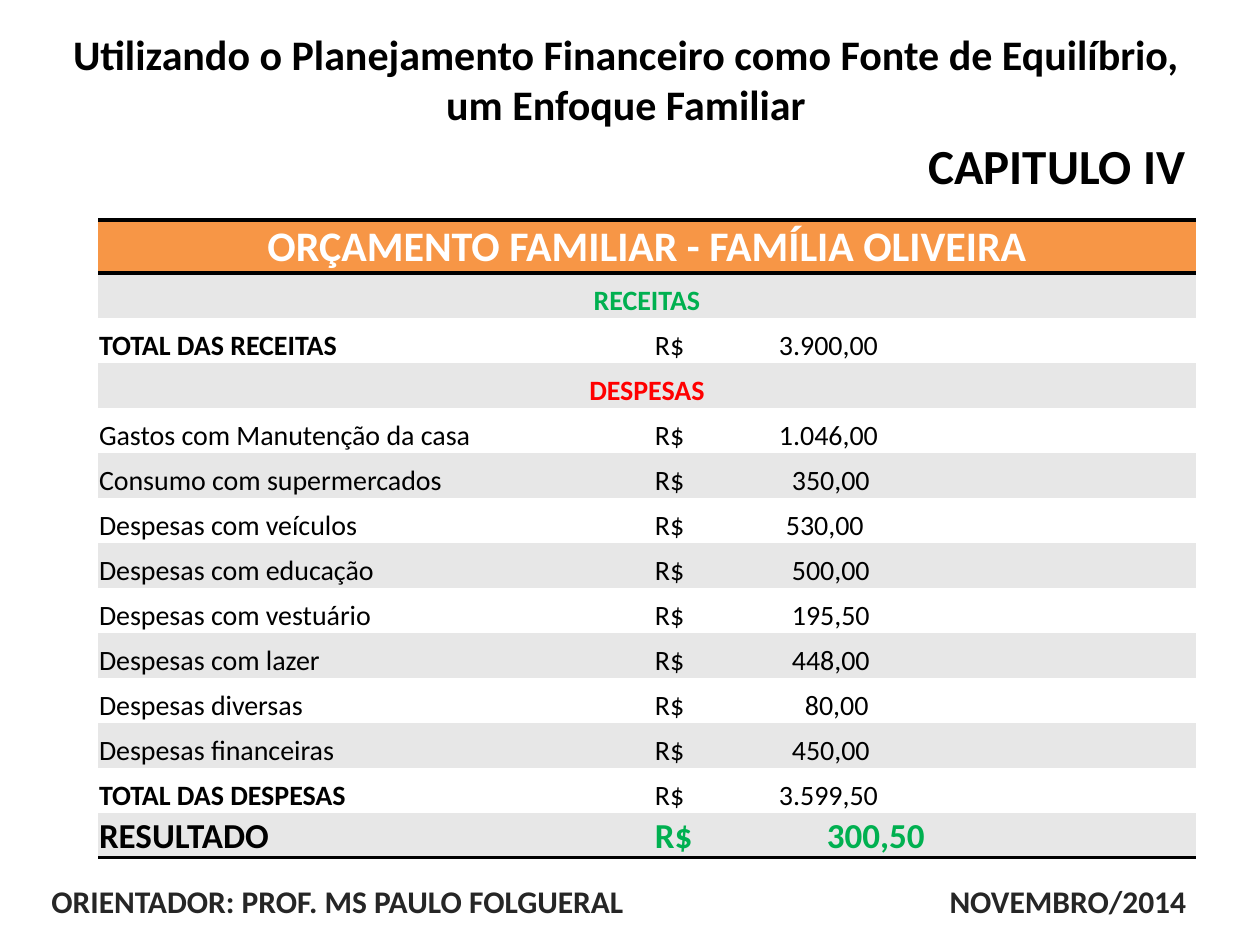
from lxml.etree import SubElement
from pptx import Presentation
from pptx.dml.color import RGBColor
from pptx.enum.text import MSO_ANCHOR, MSO_AUTO_SIZE, PP_ALIGN
from pptx.oxml.ns import qn
from pptx.util import Emu, Pt

PX = 914400 // 126
FONT = "Calibri"
NO_GRID_STYLE = "{2D5ABB26-0587-4C30-8999-92F81FD0307C}"

BLACK = RGBColor(0x00, 0x00, 0x00)
WHITE = RGBColor(0xFF, 0xFF, 0xFF)
GRAY = RGBColor(0xE7, 0xE7, 0xE7)
CHARCOAL = RGBColor(0x26, 0x26, 0x26)
ORANGE = RGBColor(0xF7, 0x96, 0x46)
GREEN = RGBColor(0x00, 0xB0, 0x50)
RED = RGBColor(0xFF, 0x00, 0x00)

TITLE = ("Utilizando o Planejamento Financeiro como Fonte de Equilíbrio, "
         "um Enfoque Familiar")
HEADING = "ORÇAMENTO FAMILIAR - FAMÍLIA OLIVEIRA"

# Section rows: name and colour; entry rows: label, amount and its tab stop
BUDGET = [
    ("RECEITAS", GREEN),
    ("TOTAL DAS RECEITAS", "3.900,00", 124),
    ("DESPESAS", RED),
    ("Gastos com Manutenção da casa", "1.046,00", 124),
    ("Consumo com supermercados", "350,00", 137),
    ("Despesas com veículos", "530,00", 131),
    ("Despesas com educação", "500,00", 137),
    ("Despesas com vestuário", "195,50", 137),
    ("Despesas com lazer", "448,00", 137),
    ("Despesas diversas", "80,00", 150),
    ("Despesas financeiras", "450,00", 137),
    ("TOTAL DAS DESPESAS", "3.599,50", 124),
    ("RESULTADO", "300,50", 172),
]


def px(length):
    return Emu(length * PX)


class BudgetSlide:
    def __init__(self, presentation):
        self.slide = presentation.slides.add_slide(presentation.slide_layouts[5])

    def add_text_run(self, paragraph, text, size, color, bold=True,
                     align=PP_ALIGN.LEFT):
        paragraph.alignment = align
        run = paragraph.add_run()
        run.text = text
        run.font.name = FONT
        run.font.size = Pt(size)
        run.font.bold = bold
        run.font.color.rgb = color

    def tab_stop(self, paragraph, position, align="l"):
        tabs = SubElement(paragraph._p.get_or_add_pPr(), qn("a:tabLst"))
        SubElement(tabs, qn("a:tab"), pos=str(px(position)), algn=align)

    def title(self, text, left, top, width, height, size):
        shape = self.slide.shapes.title
        shape.left, shape.top = px(left), px(top)
        shape.width, shape.height = px(width), px(height)
        frame = shape.text_frame
        frame.auto_size = MSO_AUTO_SIZE.NONE
        frame.vertical_anchor = MSO_ANCHOR.MIDDLE
        self.add_text_run(frame.paragraphs[0], text, size, BLACK,
                          align=PP_ALIGN.CENTER)

    def text(self, text, left, top, width, height, size, color,
             wrap=False, right_tab=None):
        shape = self.slide.shapes.add_textbox(px(left), px(top), px(width), px(height))
        frame = shape.text_frame
        frame.word_wrap = wrap
        frame.vertical_anchor = MSO_ANCHOR.MIDDLE
        paragraph = frame.paragraphs[0]
        if right_tab:
            self.tab_stop(paragraph, right_tab, "r")
        self.add_text_run(paragraph, text, size, color)

    def border(self, cell, side):
        line = SubElement(cell._tc.get_or_add_tcPr(), qn(f"a:ln{side}"),
                          w=str(Pt(2)))
        fill = SubElement(line, qn("a:solidFill"))
        SubElement(fill, qn("a:srgbClr"), val=str(BLACK))

    def style_row(self, row, fill, sides=""):
        for cell in row.cells:
            for side in sides:
                self.border(cell, side)
            cell.fill.solid()
            cell.fill.fore_color.rgb = fill
            cell.vertical_anchor = MSO_ANCHOR.BOTTOM
            cell.margin_left = cell.margin_right = cell.margin_top = px(1)
            cell.margin_bottom = 0

    def banner(self, row, text, size, color):
        first, last = row.cells
        first.merge(last)
        self.add_text_run(first.text_frame.paragraphs[0], text, size, color,
                          align=PP_ALIGN.CENTER)

    def entry(self, row, label, amount, stop):
        result = label == "RESULTADO"
        size = 20 if result else 16
        label_cell, amount_cell = row.cells
        self.add_text_run(label_cell.text_frame.paragraphs[0], label, size, BLACK,
                          label.isupper(), PP_ALIGN.JUSTIFY)
        amount_cell.margin_left = px(8)
        paragraph = amount_cell.text_frame.paragraphs[0]
        self.tab_stop(paragraph, stop)
        self.add_text_run(paragraph, f"R$\t{amount}", size,
                          GREEN if result else BLACK, result, PP_ALIGN.JUSTIFY)

    def table(self, heading, budget, left, top, column_width, heading_height, row_height):
        count = len(budget)
        frame = self.slide.shapes.add_table(
            count + 1, 2, px(left), px(top), px(2 * column_width),
            px(heading_height + count * row_height))
        table = frame.table
        table.first_row = table.horz_banding = False
        table._tbl.tblPr.find(qn("a:tableStyleId")).text = NO_GRID_STYLE
        for column in table.columns:
            column.width = px(column_width)

        # Heading row
        heading_row, *rows = table.rows
        heading_row.height = px(heading_height)
        self.style_row(heading_row, ORANGE, "TB")
        self.banner(heading_row, heading, 24, WHITE)

        # Banded budget rows, closed by a rule under the last one
        for index, (row, values) in enumerate(zip(rows, budget)):
            row.height = px(row_height)
            self.style_row(row, WHITE if index % 2 else GRAY,
                           "B" if index == count - 1 else "")
            if len(values) == 2:
                name, color = values
                self.banner(row, name, 16, color)
            else:
                self.entry(row, *values)


def main():
    presentation = Presentation()
    presentation.slide_width, presentation.slide_height = px(1260), px(945)
    slide = BudgetSlide(presentation)

    # Title and chapter
    slide.title(TITLE, 59, 0, 1134, 158, 24)
    slide.text("CAPITULO IV", 916, 129, 285, 72, 28, BLACK)

    # Family budget
    slide.table(HEADING, BUDGET, 98, 220, 549, 53, 45)

    # Advisor and date
    slide.text("ORIENTADOR: PROF. MS PAULO FOLGUERAL\tNOVEMBRO/2014",
               39, 876, 1172, 50, 18, CHARCOAL, wrap=True, right_tab=1135)

    presentation.save("out.pptx")


if __name__ == "__main__":
    main()
